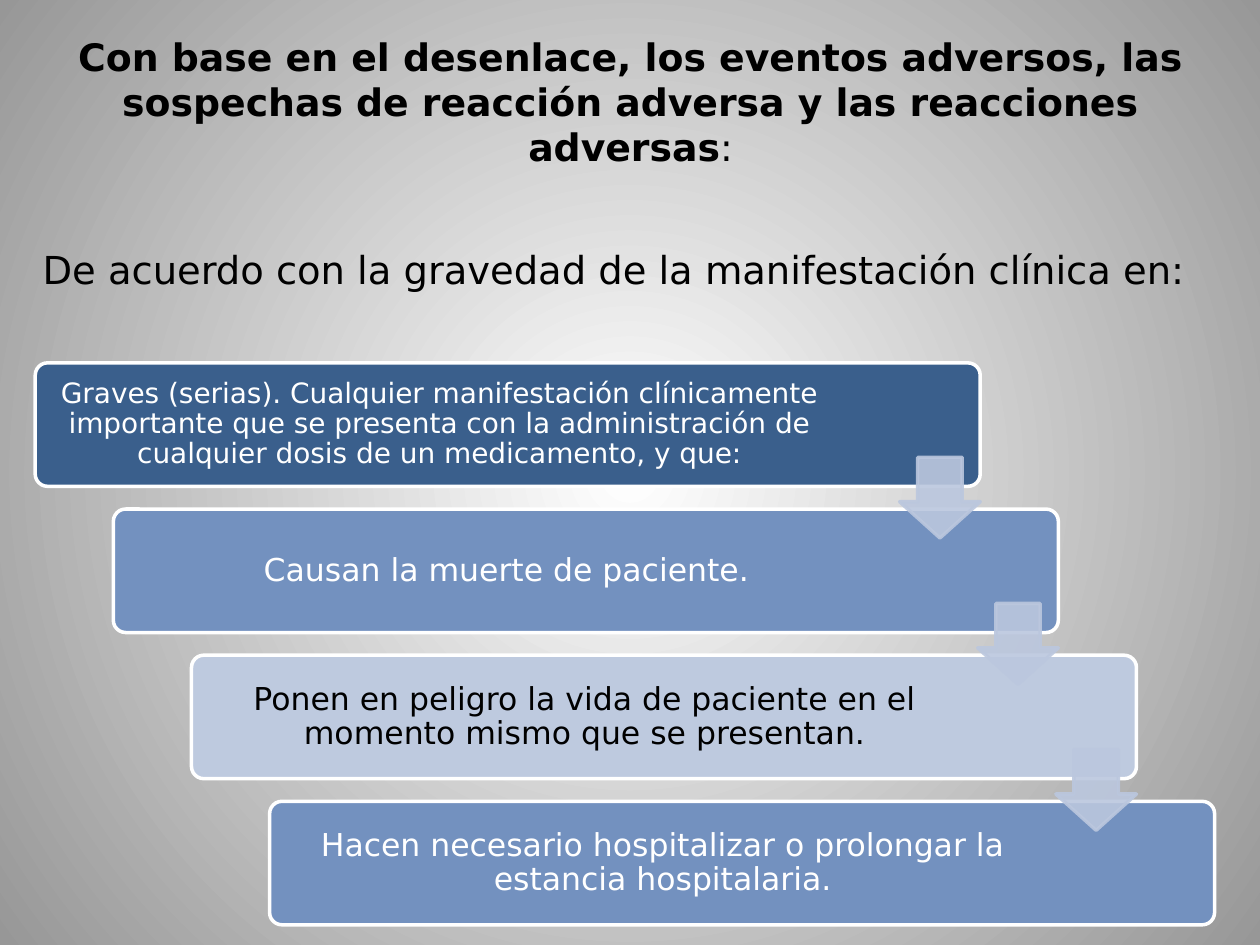
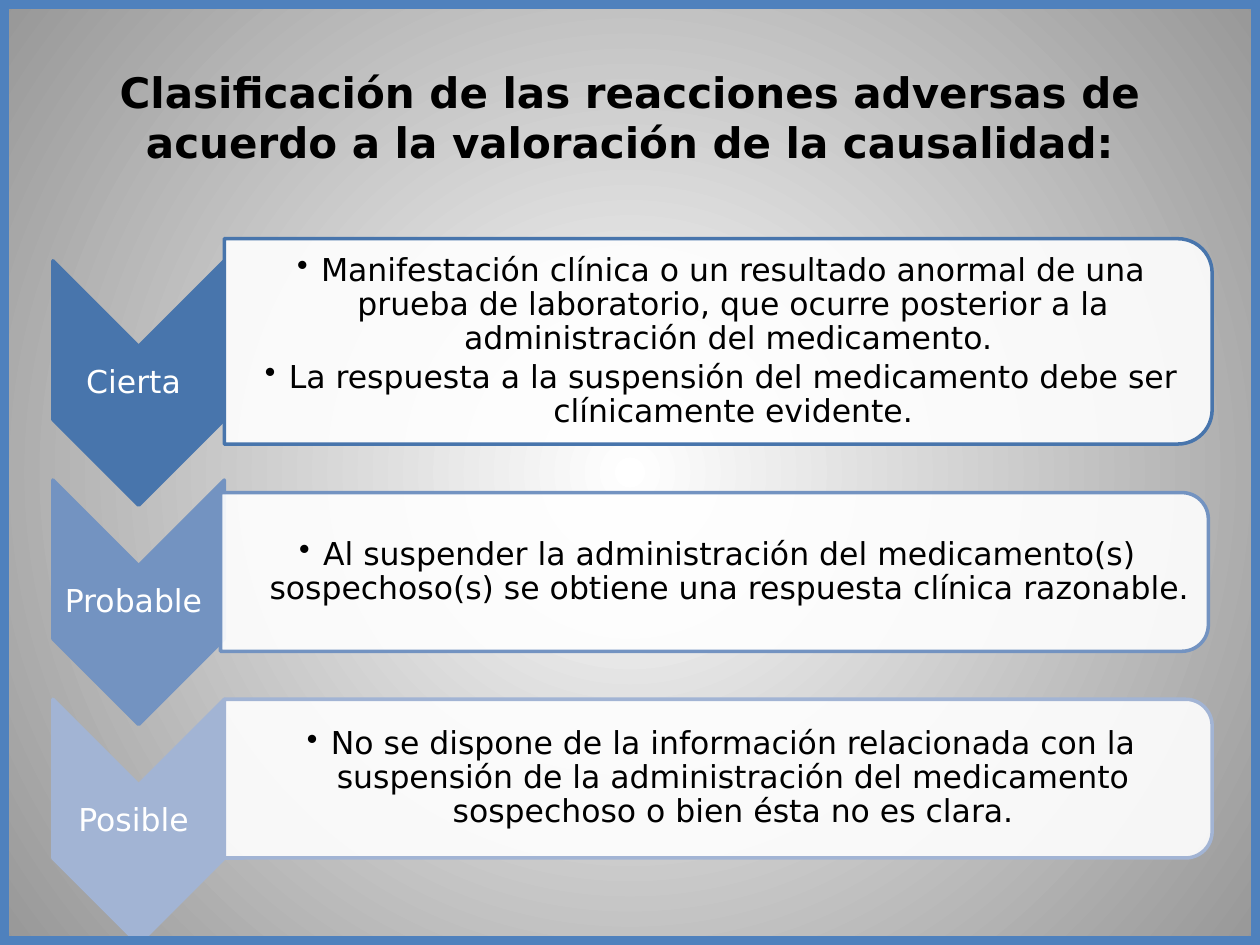
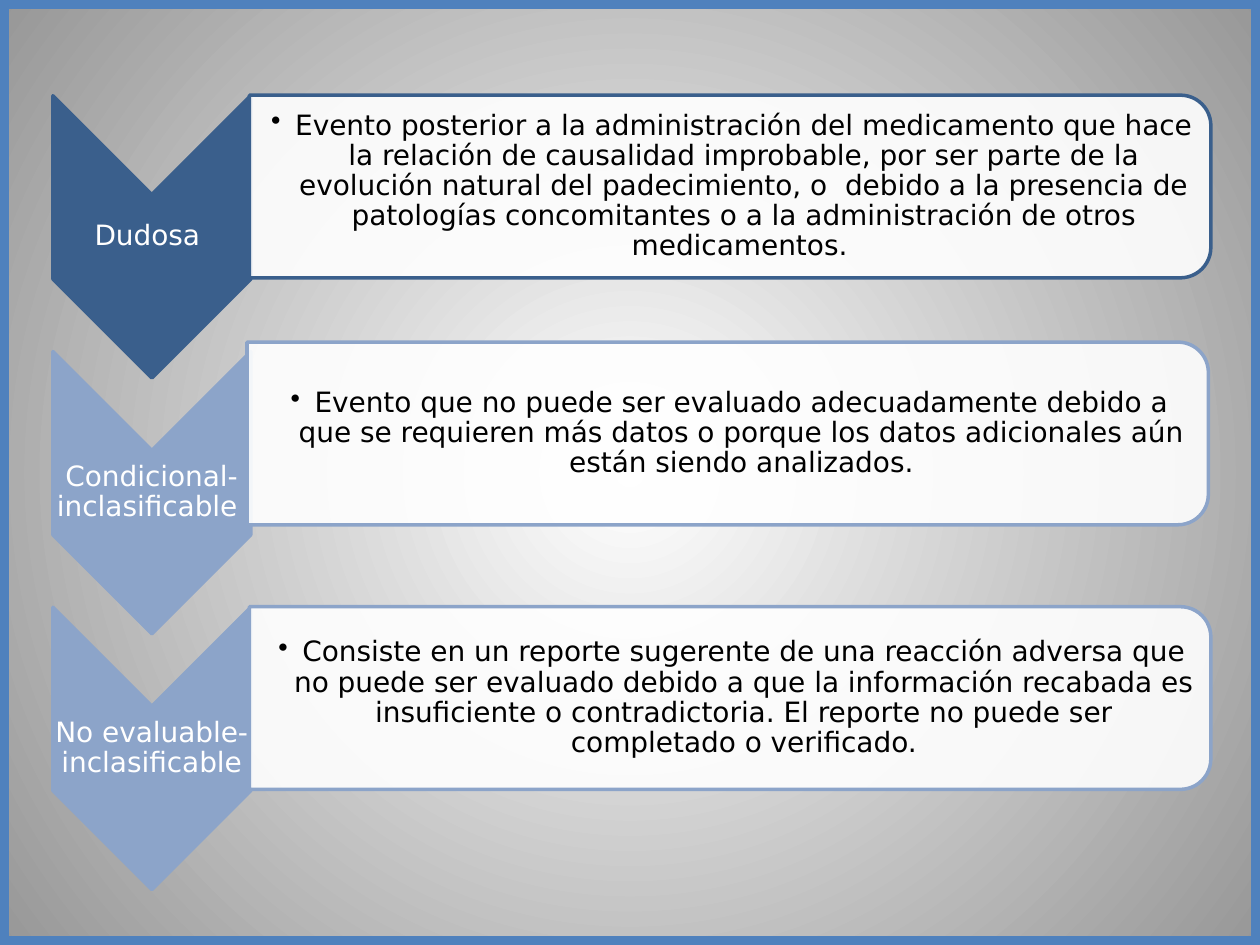
"""Build three slides that classify adverse reactions by severity and causality."""
from lxml import etree
from pptx import Presentation
from pptx.dml.color import RGBColor
from pptx.enum.shapes import MSO_SHAPE
from pptx.enum.text import MSO_ANCHOR, PP_ALIGN
from pptx.oxml.ns import qn
from pptx.util import Inches, Pt

ROUNDED = MSO_SHAPE.ROUNDED_RECTANGLE
DOWN_ARROW = MSO_SHAPE.DOWN_ARROW
CHEVRON = MSO_SHAPE.CHEVRON
PANEL = MSO_SHAPE.ROUND_2_SAME_RECTANGLE
RECTANGLE = MSO_SHAPE.RECTANGLE
CENTER, JUSTIFY = PP_ALIGN.CENTER, PP_ALIGN.JUSTIFY
MIDDLE, TOP = MSO_ANCHOR.MIDDLE, MSO_ANCHOR.TOP

FONT = "DejaVu Sans"
BLACK, WHITE, GRAY = "000000", "FFFFFF", "979797"
NAVY, STEEL, PALE, ARROW = "3A5F8C", "7391BF", "BECADF", "BBC7DE"
FRAME = "4F81BD"


def add_shape(slide, kind, box, fill, line, width=2, rotation=0, adjustments=(), fill_alpha=100, line_alpha=100):
    shape = slide.shapes.add_shape(kind, *map(Inches, box))
    shape.shadow.inherit = False
    shape.rotation = rotation
    for index, value in enumerate(adjustments):
        shape.adjustments[index] = value
    if fill:
        shape.fill.solid()
        shape.fill.fore_color.rgb = RGBColor.from_string(fill)
    else:
        shape.fill.background()
    shape.line.color.rgb = RGBColor.from_string(line)
    shape.line.width = Pt(width)
    properties = shape.element.spPr
    for parent, alpha in ((properties, fill_alpha), (properties.find(qn("a:ln")), line_alpha)):
        if alpha < 100:
            color = parent.find(qn("a:solidFill"))[0]
            etree.SubElement(color, qn("a:alpha")).set("val", str(alpha * 1000))


def add_text(slide, box, *paragraphs, size, color=BLACK, bold=False, align=CENTER, anchor=MIDDLE,
             inset=0.1, left_inset=None, spacing=1.0, after=0.0, bullet=False, indent=0.0, tail=""):
    frame = slide.shapes.add_textbox(*map(Inches, box)).text_frame
    frame.word_wrap = True
    frame.vertical_anchor = anchor
    frame.margin_left = Inches(inset if left_inset is None else left_inset)
    frame.margin_right = Inches(inset)
    frame.margin_top = frame.margin_bottom = Inches(min(inset, 0.07))
    for index, text in enumerate(paragraphs):
        paragraph = frame.paragraphs[0] if index == 0 else frame.add_paragraph()
        paragraph.alignment = align
        paragraph.line_spacing = spacing
        paragraph.space_after = Pt(size * after)
        properties = paragraph._p.get_or_add_pPr()
        properties.set("marL", str(Inches(indent)))
        if bullet:
            properties.set("indent", str(-Inches(indent)))
            etree.SubElement(properties, qn("a:buChar")).set("char", "•")
        for part, weight in ((text, bold), (tail, False)):
            if part:
                run = paragraph.add_run()
                run.text = part
                run.font.name = FONT
                run.font.size = Pt(size)
                run.font.bold = weight
                run.font.color.rgb = RGBColor.from_string(color)


presentation = Presentation()
presentation.slide_width = Inches(10)
presentation.slide_height = Inches(7.5)

slides = [presentation.slides.add_slide(presentation.slide_layouts[6]) for _ in range(3)]
for slide in slides:
    background = slide.background.fill
    background.gradient()
    for stop, color in zip(background.gradient_stops, (WHITE, GRAY)):
        stop.color.rgb = RGBColor.from_string(color)
    gradient = next(slide.element.iter(qn("a:gradFill")))
    gradient.remove(gradient.find(qn("a:lin")))
    circle = etree.SubElement(gradient, qn("a:path"))
    circle.set("path", "circle")
    center = etree.SubElement(circle, qn("a:fillToRect"))
    for side in "ltrb":
        center.set(side, "50000")

severity, causality, doubtful = slides

add_text(severity, (0.42, 0.23, 9.17, 1.15),
         "Con base en el desenlace, los eventos adversos, las sospechas de reacción adversa y las reacciones adversas",
         size=21.6, bold=True, tail=":")
add_text(severity, (0.19, 1.88, 9.61, 4.82), "De acuerdo con la gravedad de la manifestación clínica en:",
         size=22, align=JUSTIFY, anchor=TOP, indent=0.05)

STEPS = [
    ("Graves (serias). Cualquier manifestación clínicamente importante que se presenta con la "
     "administración de cualquier dosis de un medicamento, y que:", NAVY, WHITE, 16, 6.36),
    ("Causan la muerte de paciente.", STEEL, WHITE, 18, 6.18),
    ("Ponen en peligro la vida de paciente en el momento mismo que se presentan.", PALE, BLACK, 18, 6.18),
    ("Hacen necesario hospitalizar o prolongar la estancia hospitalaria.", STEEL, WHITE, 18, 6.18),
]
STEP_X, STEP_Y = 0.62, 1.16
for index, (text, fill, color, size, width) in enumerate(STEPS):
    left, top = 0.28 + index * STEP_X, 2.88 + index * STEP_Y
    add_shape(severity, ROUNDED, (left, top, 7.5, 0.98), fill, WHITE, adjustments=(0.1,))
    add_text(severity, (left + 0.03, top + 0.03, width, 0.92), text, size=size, color=color,
             inset=0.07, spacing=0.9, after=0.35)
for index in range(len(STEPS) - 1):
    add_shape(severity, DOWN_ARROW, (7.14 + index * STEP_X, 3.63 + index * STEP_Y, 0.64, 0.64),
              ARROW, ARROW, adjustments=(0.55, 0.45), fill_alpha=90, line_alpha=90)

add_text(causality, (0.5, 0.3, 9, 1.25),
         "Clasificación de las reacciones adversas de acuerdo a la valoración de la causalidad:",
         size=24, bold=True)

CAUSALITY_ROWS = [
    ("Cierta ", "4875AC", 1.78, 2.71, 1.63, [
        "Manifestación clínica o un resultado anormal de una prueba de laboratorio, que ocurre posterior "
        "a la administración del medicamento. ",
        "La respuesta a la suspensión del medicamento debe ser clínicamente evidente."]),
    ("Probable ", "7393C1", 1.75, 4.54, 1.26, [
        "Al suspender la administración del medicamento(s) sospechoso(s) se obtiene una respuesta "
        "clínica razonable."]),
    ("Posible ", "A2B4D4", 1.78, 6.18, 1.26, [
        "No se dispone de la información relacionada con la suspensión de la administración del "
        "medicamento sospechoso o bien ésta no es clara."]),
]
DOUBTFUL_ROWS = [
    ("Dudosa ", NAVY, 1.98, 1.48, 1.45, [
        "Evento posterior a la administración del medicamento que hace la relación de causalidad "
        "improbable, por ser parte de la evolución natural del padecimiento, o  debido a la presencia de "
        "patologías concomitantes o a la administración de otros medicamentos. "]),
    ("Condicional-inclasificable ", "8CA4C9", 1.96, 3.44, 1.45, [
        "Evento que no puede ser evaluado adecuadamente debido a que se requieren más datos o porque los "
        "datos adicionales aún están siendo analizados."]),
    ("No evaluable-inclasificable", "8CA4C9", 1.98, 5.54, 1.45, [
        "Consiste en un reporte sugerente de una reacción adversa que no puede ser evaluado debido a que "
        "la información recabada es insuficiente o contradictoria. El reporte no puede ser completado o "
        "verificado."]),
]
CHEVRON_LISTS = [
    (causality, CAUSALITY_ROWS, 1.94, 1.36, 3.04, 1.74, 7.84, 18, 0.14),
    (doubtful, DOUBTFUL_ROWS, 2.24, 1.57, 1.88, 2.03, 7.63, 16, 0.12),
]
for slide, rows, length, breadth, first, step, panel_width, size, left_inset in CHEVRON_LISTS:
    label_height = length * 0.3
    for index, (label, color, left, middle, height, details) in enumerate(rows):
        chevron_middle = first + index * step
        chevron_box = (0.42 + (breadth - length) / 2, chevron_middle - breadth / 2, length, breadth)
        add_shape(slide, CHEVRON, chevron_box, color, color, rotation=90)
        add_text(slide, (0.42, chevron_middle - label_height / 2, breadth, label_height), label,
                 size=size, color=WHITE, inset=0.01, spacing=0.9, after=0.35)
        panel_box = (left + (panel_width - height) / 2, middle - panel_width / 2, height, panel_width)
        add_shape(slide, PANEL, panel_box, WHITE, color, rotation=90, fill_alpha=90)
        add_text(slide, (left, middle - height * 0.45, panel_width - 0.08, height * 0.9), *details,
                 size=size, inset=0.01, left_inset=left_inset, spacing=0.9, after=0.15,
                 bullet=True, indent=0.19)
    add_shape(slide, RECTANGLE, (0, 0, 10, 7.5), None, FRAME, width=10)

presentation.save("out.pptx")
